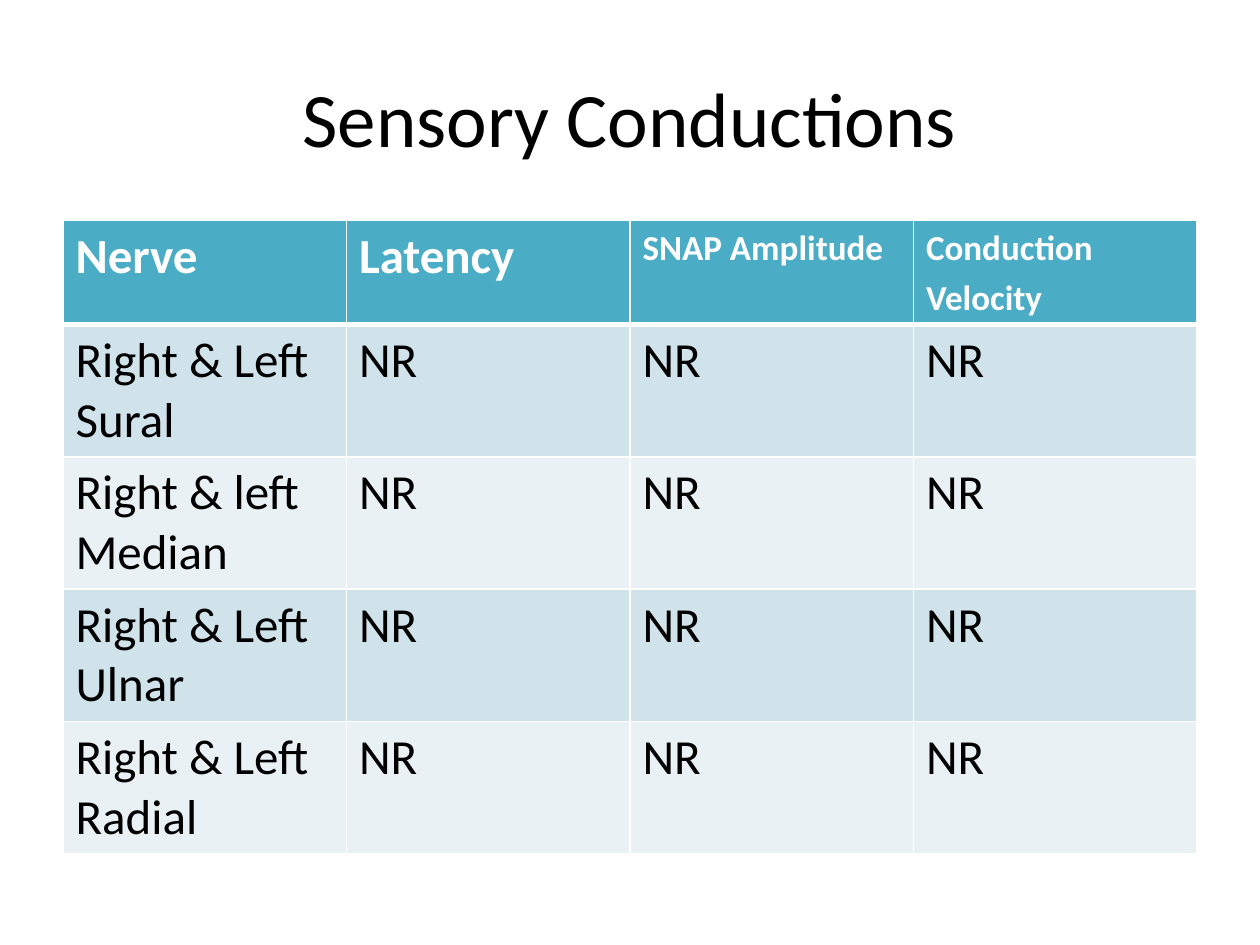
from lxml import etree
from pptx import Presentation
from pptx.dml.color import RGBColor
from pptx.enum import text
from pptx.oxml.ns import qn
from pptx.util import Pt

# Content
TITLE = "Sensory Conductions"
HEADERS = [("Nerve", 28), ("Latency", 28), ("SNAP Amplitude", 20),
           ("Conduction\nVelocity", 20)]
NERVES = ["Right & Left Sural", "Right & left Median",
          "Right & Left Ulnar", "Right & Left Radial"]
RESULT = "NR"

# Style and layout, in points
FONT = "Calibri"
BLACK, WHITE, TEAL = "000000", "FFFFFF", "4BACC6"
BANDS = ["D0E3EA", "E9F1F5"]
LEFT, WIDTH = 36, 648
TABLE_TOP, HEADER_H, ROW_H = 126, 59.5, 75.6


def rgb(value):
    return RGBColor.from_string(value)


def style(p, size, color, bold=False):
    p.font.name, p.font.size, p.font.bold = FONT, Pt(size), bold
    p.font.color.rgb = rgb(color)


def set_borders(cell, bottom):
    tcPr = cell._tc.get_or_add_tcPr()
    widths = {"a:lnL": 1, "a:lnR": 1, "a:lnT": 1, "a:lnB": bottom}
    for i, (tag, width) in enumerate(widths.items()):
        ln = etree.Element(qn(tag), w=str(Pt(width)))
        fill = etree.SubElement(ln, qn("a:solidFill"))
        etree.SubElement(fill, qn("a:srgbClr"), val=WHITE)
        tcPr.insert(i, ln)


def fill_cell(cell, content, size, color, background, bold=False, bottom=1):
    cell.fill.solid()
    cell.fill.fore_color.rgb = rgb(background)
    set_borders(cell, bottom)
    cell.text = content
    for i, p in enumerate(cell.text_frame.paragraphs):
        style(p, size, color, bold)
        if i:
            p.space_before = Pt(0.2 * size)


prs = Presentation()
prs.slide_width, prs.slide_height = Pt(720), Pt(540)
s = prs.slides.add_slide(prs.slide_layouts[6])

# Title
tf = s.shapes.add_textbox(Pt(LEFT), Pt(21.6), Pt(WIDTH), Pt(90)).text_frame
tf.word_wrap = True
tf.vertical_anchor = text.MSO_ANCHOR.MIDDLE
p = tf.paragraphs[0]
p.text = TITLE
p.alignment = text.PP_ALIGN.CENTER
style(p, 44, BLACK)

# Table
rows, cols = len(NERVES) + 1, len(HEADERS)
height = HEADER_H + ROW_H * len(NERVES)
table = s.shapes.add_table(rows, cols, Pt(LEFT), Pt(TABLE_TOP),
                           Pt(WIDTH), Pt(height)).table
for r, row in enumerate(table.rows):
    row.height = Pt(ROW_H if r else HEADER_H)

# Header row
for c, (label, size) in enumerate(HEADERS):
    fill_cell(table.cell(0, c), label, size, WHITE, TEAL, bold=True, bottom=3)

# Banded body rows
for r, nerve in enumerate(NERVES):
    for c, value in enumerate([nerve] + [RESULT] * (cols - 1)):
        fill_cell(table.cell(r + 1, c), value, 28, BLACK, BANDS[r % 2])

prs.save("out.pptx")
